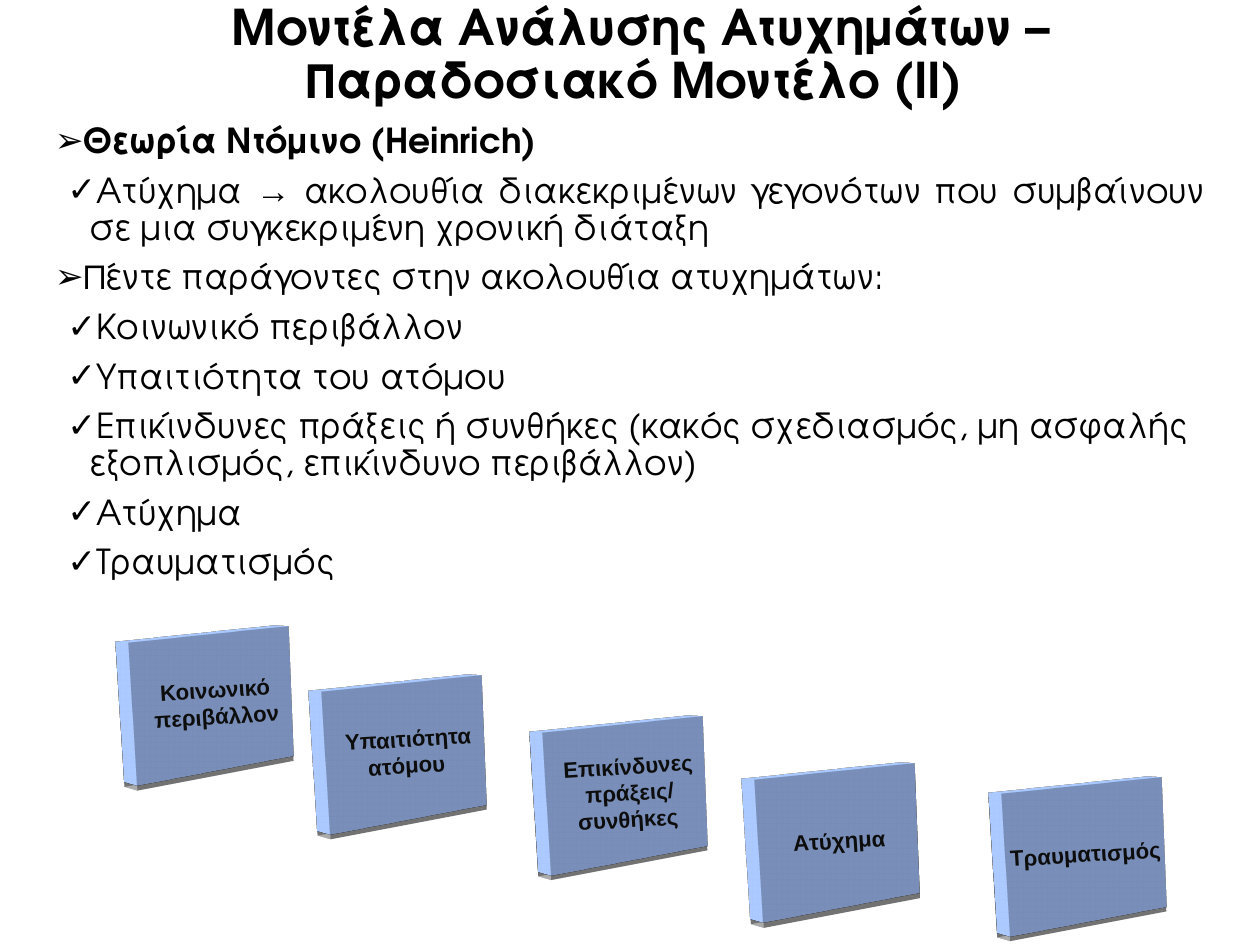
from pptx import Presentation
from pptx.dml.color import RGBColor
from pptx.enum.shapes import MSO_SHAPE as Shape
from pptx.enum.text import MSO_ANCHOR as Anchor, MSO_AUTO_SIZE as Auto, PP_ALIGN as Align
from pptx.oxml import parse_xml
from pptx.oxml.ns import nsdecls
from pptx.util import Inches, Pt

HEAD, CHECK = ("➢", 0.25), ("✓", 0.39)
POINTS = [
    (HEAD, ["Θεωρία Ντόμινο (Heinrich)"], True, Align.LEFT),
    (CHECK, ["Ατύχημα ", "→ ", "ακολουθία διακεκριμένων γεγονότων που συμβαίνουν "
             "σε μια συγκεκριμένη χρονική διάταξη"], False, Align.JUSTIFY),
    (HEAD, ["Πέντε παράγοντες στην ακολουθία ατυχημάτων:"], False, Align.LEFT),
    (CHECK, ["Κοινωνικό περιβάλλον"], False, Align.LEFT),
    (CHECK, ["Υπαιτιότητα του ατόμου"], False, Align.LEFT),
    (CHECK, ["Επικίνδυνες πράξεις ή συνθήκες (κακός σχεδιασμός, μη ασφαλής "
             "εξοπλισμός, επικίνδυνο περιβάλλον)"], False, Align.LEFT),
    (CHECK, ["Ατύχημα"], False, Align.LEFT),
    (CHECK, ["Τραυματισμός"], False, Align.LEFT),
]
TILES = [
    (1.35, 7.16, "Κοινωνικό περιβάλλον"),
    (3.53, 7.71, "Υπαιτιότητα ατόμου "),
    (6.02, 8.17, "Επικίνδυνες πράξεις/ συνθήκες "),
    (8.42, 8.71, "Ατύχημα "),
    (11.2, 8.86, "Τραυματισμός "),
]
SHADOW = """<a:outerShdw %s blurRad="226060" dist="50800" dir="5220000" algn="ctr">
  <a:srgbClr val="000000"><a:alpha val="33000"/></a:srgbClr></a:outerShdw>"""
SCENE = """<a:scene3d %s><a:camera prst="perspectiveFront" fov="3300000">
  <a:rot lat="486000" lon="19530000" rev="174000"/></a:camera>
  <a:lightRig rig="harsh" dir="t"><a:rot lat="0" lon="0" rev="3000000"/></a:lightRig>
  </a:scene3d>"""
SOLID = """<a:sp3d %s extrusionH="254000" contourW="19050">
  <a:bevelT w="82550" h="44450" prst="angle"/><a:bevelB w="82550" h="44450" prst="angle"/>
  <a:contourClr><a:srgbClr val="FFFFFF"/></a:contourClr></a:sp3d>"""


def color(code):
    return RGBColor.from_string(code)


def node(xml):
    return parse_xml(xml % nsdecls("a"))


class Deck:
    face, plain = "TeX Gyre Adventor", "Arial"
    ink, dark, blue = "000000", "0D0D0D", "8FAADC"

    def __init__(self, wide, high):
        self.show = Presentation()
        self.show.slide_width, self.show.slide_height = Inches(wide), Inches(high)
        self.slide = self.show.slides.add_slide(self.show.slide_layouts[1])

    def place(self, shape, left, top, wide, high):
        shape.left, shape.top = Inches(left), Inches(top)
        shape.width, shape.height = Inches(wide), Inches(high)
        frame = shape.text_frame
        frame.word_wrap, frame.auto_size = True, Auto.NONE
        return frame

    def style(self, font, size, face, ink, bold):
        font.size, font.name, font.bold = Pt(size), face, bold
        font.color.rgb = color(ink)

    def title(self, text, *box):
        frame = self.place(self.slide.shapes.title, *box)
        frame.vertical_anchor = Anchor.MIDDLE
        para = frame.paragraphs[0]
        para.text, para.alignment, para.line_spacing = text, Align.CENTER, 0.9
        self.style(para.font, 40, self.face, self.ink, True)

    def points(self, items, *box):
        frame = self.place(self.slide.placeholders[1], *box)
        frame.vertical_anchor = Anchor.TOP
        for i, (mark, parts, bold, align) in enumerate(items):
            para = frame.add_paragraph() if i else frame.paragraphs[0]
            self.bullet(para, *mark)
            para.alignment, para.line_spacing = align, 0.9
            para.space_before, para.space_after = Pt(10 if i else 0), Pt(0)
            self.style(para.font, 28, self.face, self.ink, bold)
            for part in parts:
                run = para.add_run()
                run.text = part
                if part == "→ ":
                    run.font.name = self.plain

    def bullet(self, para, sign, left):
        para.level = 0 if sign == HEAD[0] else 1
        props = para._p.get_or_add_pPr()
        props.set("marL", str(Inches(left)))
        props.set("indent", str(Inches(-0.25)))
        props.append(node('<a:buFont %s typeface="Arial"/>'))
        props.append(node('<a:buChar %s char="' + sign + '"/>'))

    def tile(self, left, top, text):
        """Add one domino: a thick block seen in perspective."""
        shape = self.slide.shapes.add_shape(Shape.FLOWCHART_PROCESS, 0, 0, 0, 0)
        frame = self.place(shape, left, top, 2.17, 1.55)
        shape.fill.solid()
        shape.fill.fore_color.rgb = color(self.blue)
        shape.line.fill.background()
        shape.shadow.inherit = False
        props = shape._element.spPr
        props[-1].append(node(SHADOW))
        props.append(node(SCENE))
        props.append(node(SOLID))
        frame.vertical_anchor = Anchor.MIDDLE
        para = frame.paragraphs[0]
        para.text, para.alignment = text, Align.CENTER
        self.style(para.font, 18, self.plain, self.dark, True)


def main():
    deck = Deck(14.22, 10.67)
    deck.title("Μοντέλα Ανάλυσης Ατυχημάτων – Παραδοσιακό Μοντέλο (ΙΙ) ",
               0.52, -0.08, 13.43, 1.43)
    deck.points(POINTS, 0.52, 1.35, 13.17, 4.46)
    for item in TILES:
        deck.tile(*item)
    deck.show.save("out.pptx")


if __name__ == "__main__":
    main()
